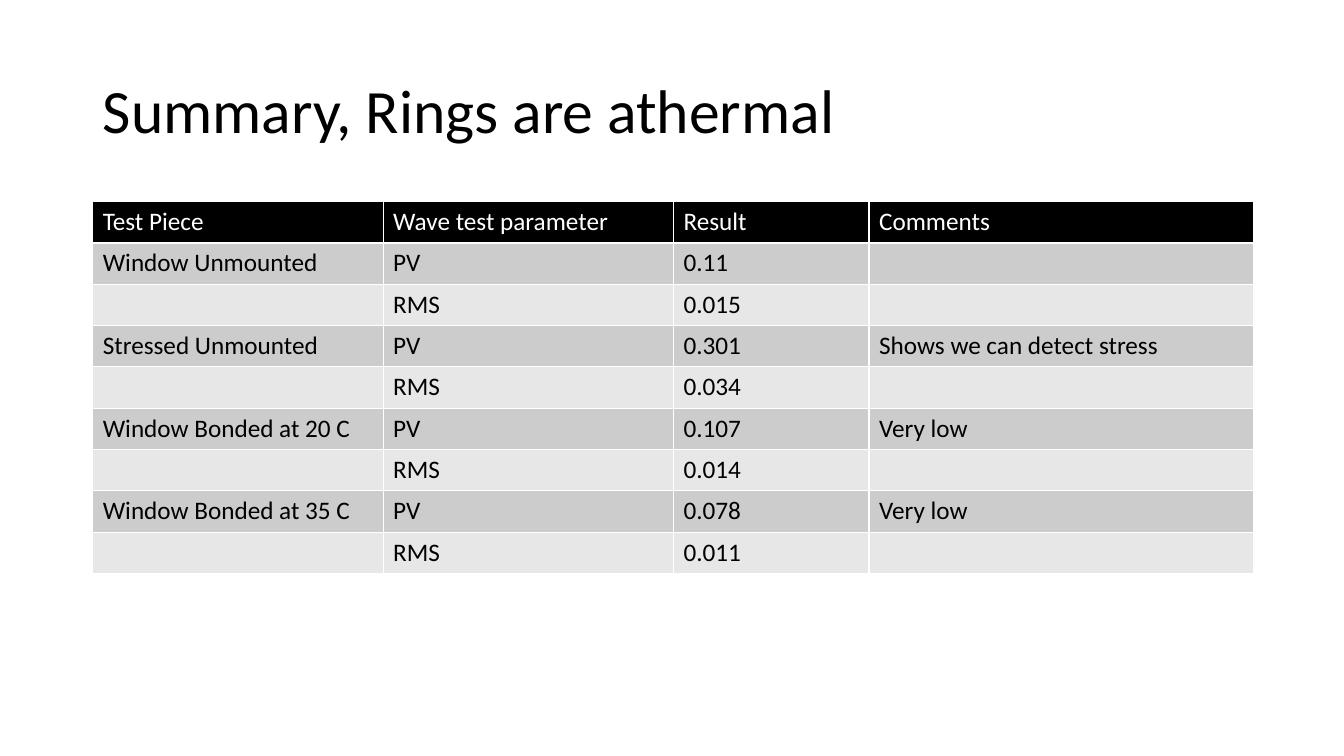
from pptx import Presentation
from pptx.dml.color import RGBColor
from pptx.enum.text import MSO_ANCHOR, PP_ALIGN
from pptx.util import Inches, Pt

FONT = "Calibri"
BLACK, WHITE = "000000", "FFFFFF"
BANDS = ["CCCCCC", "E7E7E7"]
LEFT, WIDTH = 0.92, 11.5
COLUMN_WIDTHS = [2.88, 2.88, 1.94, 3.81]
ROW_HEIGHT = 0.41

HEADINGS = ["Test Piece", "Wave test parameter", "Result", "Comments"]
# Test piece, PV result, RMS result, comment
TESTS = [
    ("Window Unmounted", "0.11", "0.015", ""),
    ("Stressed Unmounted", "0.301", "0.034", "Shows we can detect stress"),
    ("Window Bonded at 20 C", "0.107", "0.014", "Very low"),
    ("Window Bonded at 35 C", "0.078", "0.011", "Very low"),
]


def color(hex_string):
    return RGBColor.from_string(hex_string)


def add_span(para, text, size, hex_string):
    span = para.add_run()
    span.text = text
    span.font.name = FONT
    span.font.size = Pt(size)
    span.font.bold = False
    span.font.color.rgb = color(hex_string)


def fill_title(page, text):
    title = page.shapes.title
    title.left, title.top = Inches(LEFT), Inches(0.4)
    title.width, title.height = Inches(WIDTH), Inches(1.45)
    frame = title.text_frame
    frame.vertical_anchor = MSO_ANCHOR.MIDDLE
    para = frame.paragraphs[0]
    para.alignment = PP_ALIGN.LEFT
    para.line_spacing = 0.9
    add_span(para, text, 44, BLACK)


def fill_cell(cell, text, background, text_color):
    cell.fill.solid()
    cell.fill.fore_color.rgb = color(background)
    if text:
        add_span(cell.text_frame.paragraphs[0], text, 18, text_color)


def add_results_table(page, rows):
    frame = page.shapes.add_table(
        len(rows), len(COLUMN_WIDTHS), Inches(LEFT), Inches(2),
        Inches(WIDTH), Inches(ROW_HEIGHT * len(rows)))
    table = frame.table
    for column, width in zip(table.columns, COLUMN_WIDTHS):
        column.width = Inches(width)
    for index, texts in enumerate(rows):
        table.rows[index].height = Inches(ROW_HEIGHT)
        background = BANDS[(index - 1) % 2] if index else BLACK
        text_color = BLACK if index else WHITE
        for cell, text in zip(table.rows[index].cells, texts):
            fill_cell(cell, text, background, text_color)


def main():
    deck = Presentation()
    deck.slide_width, deck.slide_height = Inches(13.33), Inches(7.5)
    page = deck.slides.add_slide(deck.slide_layouts[5])

    # Title
    fill_title(page, "Summary, Rings are athermal")

    # Results: two rows for each test piece
    rows = [HEADINGS]
    for piece, pv, rms, comment in TESTS:
        rows += [(piece, "PV", pv, comment), ("", "RMS", rms, "")]
    add_results_table(page, rows)

    deck.save("out.pptx")


if __name__ == "__main__":
    main()
